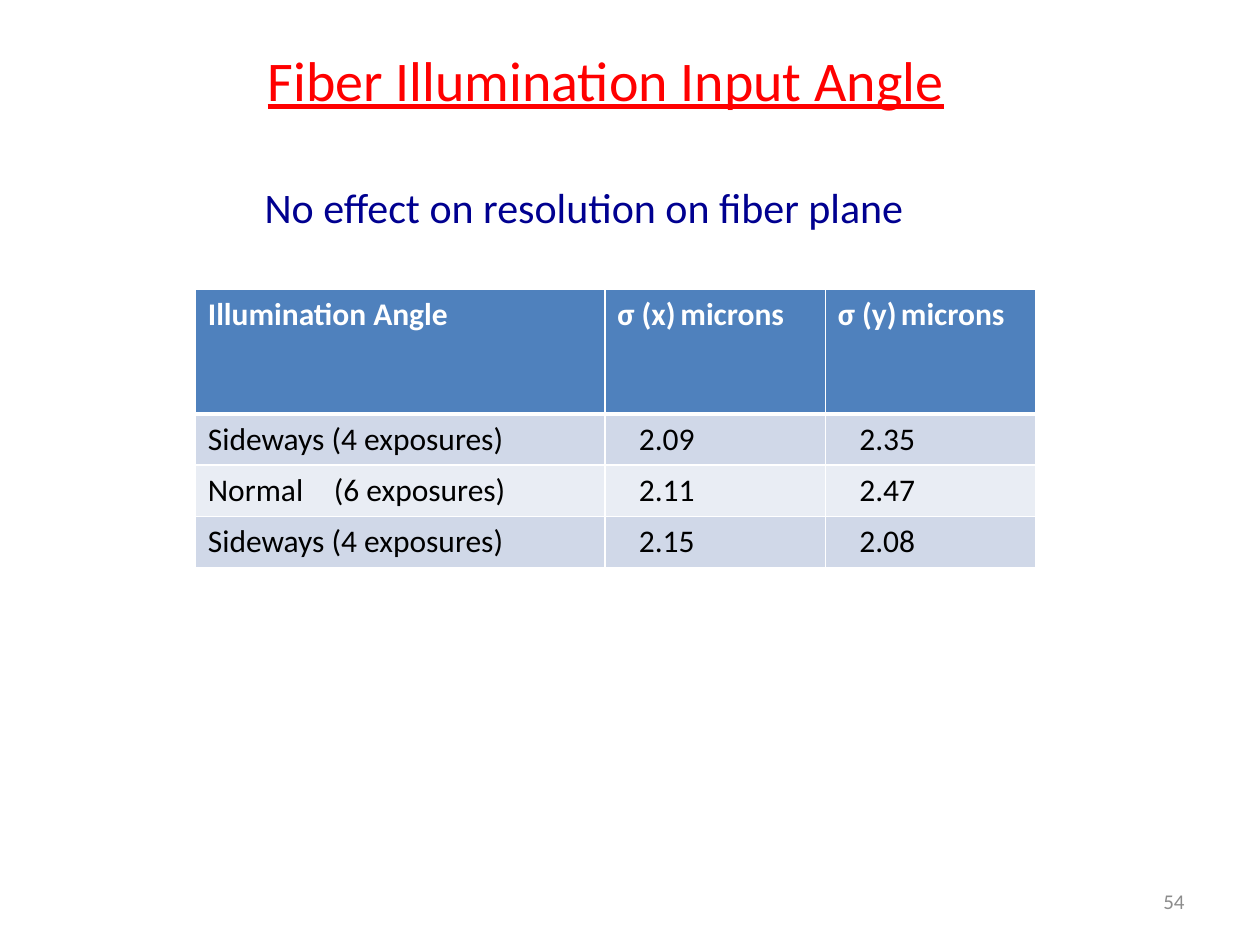
import dataclasses
import typing

import lxml.etree
import pptx
import pptx.dml.color
import pptx.enum.text
import pptx.oxml.ns
import pptx.util

SLIDE_WIDTH = pptx.util.Inches(10)
SLIDE_HEIGHT = pptx.util.Inches(7.5)
COLUMN = SLIDE_WIDTH / 100
ROW = SLIDE_HEIGHT / 100
FONT = "Calibri"
COLORS = {
    "title": "FF0000",
    "statement": "000090",
    "number": "8C8C8C",
    "white": "FFFFFF",
    "black": "000000",
    "header": "4F81BD",
    "odd_row": "D0D8E8",
    "even_row": "E9EDF4",
}


@dataclasses.dataclass(frozen=True)
class Area:
    left: float
    top: float
    width: float
    height: float

    def lengths(self) -> typing.Tuple[int, int, int, int]:
        return (
            round(self.left * COLUMN),
            round(self.top * ROW),
            round(self.width * COLUMN),
            round(self.height * ROW),
        )


@dataclasses.dataclass(frozen=True)
class TextStyle:
    size: int
    color: str
    bold: bool = False
    underline: bool = False
    align: typing.Any = pptx.enum.text.PP_ALIGN.LEFT
    indent: float = 0
    tab: float = 0


@dataclasses.dataclass(frozen=True)
class TableRow:
    cells: typing.Tuple[str, str, str]
    height: float
    fill: str
    styles: typing.Tuple[TextStyle, TextStyle, TextStyle]
    top_line: int = 1
    bottom_line: int = 1


def rgb(name: str) -> pptx.dml.color.RGBColor:
    return pptx.dml.color.RGBColor.from_string(COLORS[name])


def add_element(parent, tag: str, **attributes: str):
    return lxml.etree.SubElement(parent, pptx.oxml.ns.qn(tag), attributes)


def write_text(text_frame, text: str, style: TextStyle) -> None:
    paragraph = text_frame.paragraphs[0]
    properties = paragraph._p.get_or_add_pPr()
    properties.set("marL", str(round(style.indent * COLUMN)))
    properties.set("indent", "0")
    add_element(properties, "a:buNone")
    if style.tab:
        tabs = add_element(properties, "a:tabLst")
        add_element(tabs, "a:tab", pos=str(round(style.tab * COLUMN)), algn="l")
    paragraph.alignment = style.align
    paragraph.space_before = pptx.util.Pt(0)
    run = paragraph.add_run()
    run.text = text
    run.font.name = FONT
    run.font.size = pptx.util.Pt(style.size)
    run.font.bold = style.bold
    run.font.underline = style.underline
    run.font.color.rgb = rgb(style.color)


def fill_box(shape, area: Area, text: str, style: TextStyle, anchor) -> None:
    shape.left, shape.top, shape.width, shape.height = area.lengths()
    text_frame = shape.text_frame
    text_frame.word_wrap = True
    text_frame.auto_size = pptx.enum.text.MSO_AUTO_SIZE.NONE
    text_frame.vertical_anchor = anchor
    write_text(text_frame, text, style)


def set_borders(cell, row: TableRow) -> None:
    properties = cell._tc.get_or_add_tcPr()
    widths = {"L": 1, "R": 1, "T": row.top_line, "B": row.bottom_line}
    for side, width in widths.items():
        line = add_element(properties, f"a:ln{side}", w=str(pptx.util.Pt(width)))
        fill = add_element(line, "a:solidFill")
        add_element(fill, "a:srgbClr", val=COLORS["white"])


def add_results_table(
    slide, area: Area, widths: typing.Sequence[float], rows: typing.Sequence[TableRow]
) -> None:
    table = slide.shapes.add_table(len(rows), len(widths), *area.lengths()).table
    table.horz_banding = False
    for column, width in zip(table.columns, widths):
        column.width = round(width * COLUMN)
    for table_row, row in zip(table.rows, rows):
        table_row.height = round(row.height * ROW)
        for cell, text, style in zip(table_row.cells, row.cells, row.styles):
            set_borders(cell, row)
            cell.fill.solid()
            cell.fill.fore_color.rgb = rgb(row.fill)
            write_text(cell.text_frame, text, style)


def main() -> None:
    presentation = pptx.Presentation()
    presentation.slide_width = SLIDE_WIDTH
    presentation.slide_height = SLIDE_HEIGHT
    slide = presentation.slides.add_slide(presentation.slide_layouts[1])
    alignment = pptx.enum.text.PP_ALIGN
    anchor = pptx.enum.text.MSO_ANCHOR

    fill_box(
        slide.shapes.title,
        Area(3.1, 0, 90, 16.67),
        "Fiber Illumination Input Angle",
        TextStyle(32, "title", underline=True, align=alignment.CENTER),
        anchor.MIDDLE,
    )
    fill_box(
        slide.placeholders[1],
        Area(5, 18.53, 90, 71.07),
        "No effect on resolution on fiber plane",
        TextStyle(24, "statement", indent=15),
        anchor.TOP,
    )
    number_area = Area(71.7, 92.67, 23.3, 5.33)
    fill_box(
        slide.shapes.add_textbox(*number_area.lengths()),
        number_area,
        "54",
        TextStyle(12, "number", align=alignment.RIGHT),
        anchor.MIDDLE,
    )

    heading = TextStyle(18, "white", bold=True, tab=5.8)
    label = TextStyle(18, "black", tab=9.8)
    value = TextStyle(18, "black", indent=1.7)
    measurements = (
        ("Sideways (4 exposures)", "2.09", "2.35"),
        ("Normal\t(6 exposures)", "2.11", "2.47"),
        ("Sideways (4 exposures)", "2.15", "2.08"),
    )
    header = TableRow(
        ("Illumination Angle", "σ (x)\tmicrons", "σ (y)\tmicrons"),
        13.2,
        "header",
        (heading, heading, heading),
        bottom_line=3,
    )
    body = [
        TableRow(
            cells,
            5.42,
            "even_row" if index % 2 else "odd_row",
            (label, value, value),
            top_line=1 if index else 3,
        )
        for index, cells in enumerate(measurements)
    ]
    add_results_table(
        slide, Area(15.5, 30.6, 66.7, 29.46), (32.5, 17.5, 16.7), [header, *body]
    )
    presentation.save("out.pptx")


if __name__ == "__main__":
    main()
